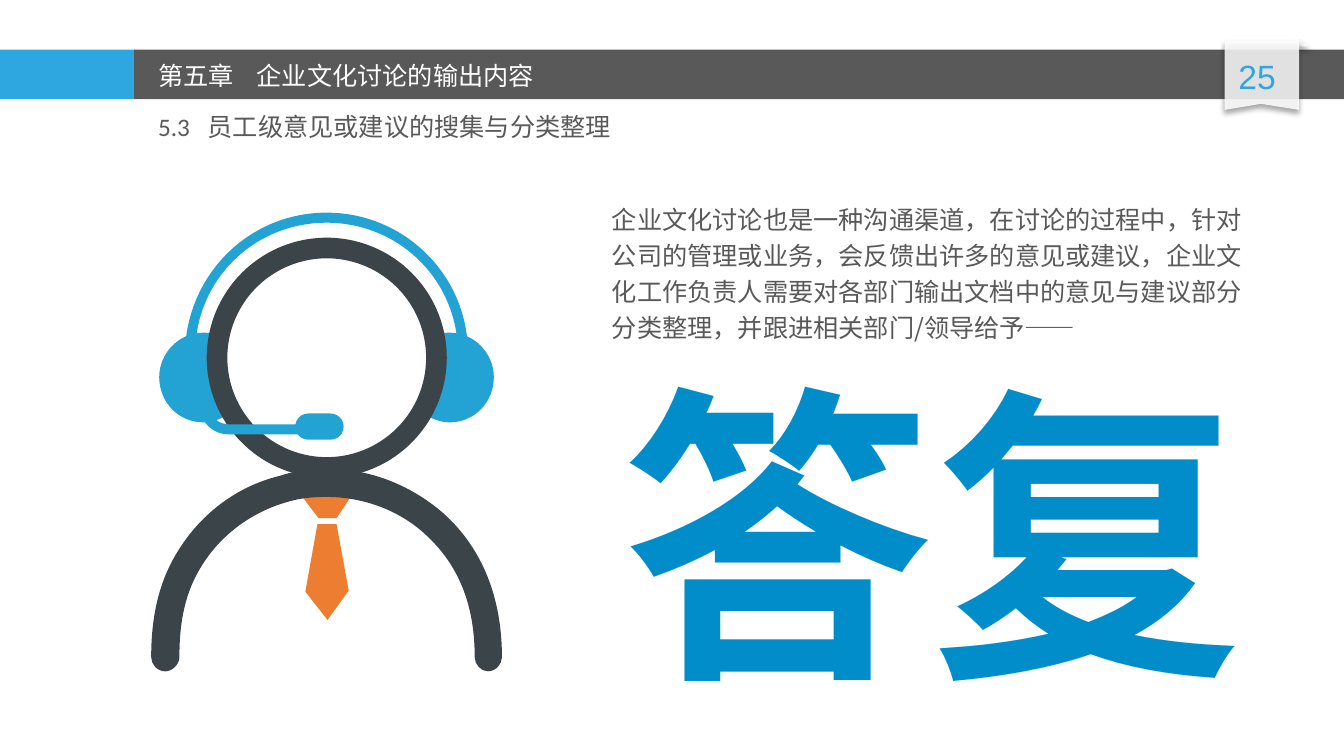
"""Build the slide on collecting and answering staff suggestions."""
from lxml.etree import SubElement
from pptx import Presentation
from pptx.dml.color import RGBColor
from pptx.enum.shapes import MSO_SHAPE
from pptx.enum.text import MSO_ANCHOR, MSO_AUTO_SIZE, PP_ALIGN
from pptx.oxml.ns import qn
from pptx.util import Cm, Pt

COLORS = {
    "bar_blue": "2EA7E0",
    "gray": "595959",
    "white": "FFFFFF",
    "fold": "F8F8F8",
    "headset": "23A3D4",
    "figure": "3B4449",
    "tie": "ED7D31",
    "answer": "008DCA",
}
CJK_FONT = "Noto Sans CJK SC"
GRID = Cm(0.0254)


def paint(shape, color):
    shape.shadow.inherit = False
    shape.fill.solid()
    shape.fill.fore_color.rgb = RGBColor.from_string(COLORS[color])
    shape.line.fill.background()
    return shape


def draw_outline(shapes, color, start, *segments):
    points = [(segment[index] * GRID, segment[index + 1] * GRID)
              for segment in segments for index in range(0, len(segment), 2)]
    builder = shapes.build_freeform(start[0] * GRID, start[1] * GRID)
    builder.add_line_segments(points, close=True)
    shape = builder.convert_to_shape()
    steps = iter(list(shape._element.iter(qn("a:lnTo"))))
    for segment in segments:
        step = next(steps)
        if len(segment) == 6:
            step.tag = qn("a:cubicBezTo")
            for _ in range(2):
                control = next(steps)
                step.append(control[0])
                control.getparent().remove(control)
    return paint(shape, color)


presentation = Presentation()
presentation.slide_width = Cm(33.87)
presentation.slide_height = Cm(19.05)
slide = presentation.slides.add_slide(presentation.slide_layouts[5])
shapes = slide.shapes

for left, width, color in [(0, 3.38, "bar_blue"), (3.38, 30.49, "gray")]:
    bar = shapes.add_shape(MSO_SHAPE.RECTANGLE, Cm(left), Cm(1.25), Cm(width), Cm(1.25))
    paint(bar, color)

ribbon_fold = shapes.add_shape(
    MSO_SHAPE.RIGHT_TRIANGLE, Cm(32.74), Cm(0.97), Cm(0.3), Cm(0.2))
paint(ribbon_fold, "fold")
ribbon = draw_outline(
    shapes, "white", (1215, 109), (1215, 40), (1289, 40), (1289, 109), (1251, 103))
for shape in (ribbon_fold, ribbon):
    properties = shape._element.spPr
    fill_color = properties.find(qn("a:solidFill"))[0]
    SubElement(fill_color, qn("a:alpha"), val="85000")
    shadow = SubElement(
        properties.find(qn("a:effectLst")), qn("a:outerShdw"),
        blurRad=str(Pt(4)), dist=str(Pt(3)), dir="5400000", rotWithShape="0")
    shadow_color = SubElement(shadow, qn("a:srgbClr"), val="000000")
    SubElement(shadow_color, qn("a:alpha"), val="40000")

for mirrored in (False, True):
    ear_cup = [
        (216, 364), (216, 351, 210, 343, 217, 333), (213, 331, 208, 330, 202, 330),
        (177, 330, 158, 351, 158, 374), (158, 399, 177, 419, 202, 419),
        (210, 419, 218, 416, 225, 412), (221, 401, 216, 381, 216, 364)]
    if mirrored:
        ear_cup = [tuple(648 - value if index % 2 == 0 else value
                         for index, value in enumerate(segment))
                   for segment in ear_cup]
    draw_outline(shapes, "headset", *ear_cup)

draw_outline(shapes, "tie", (315, 520), (303, 587), (325, 615), (346, 586), (334, 520))
draw_outline(
    shapes, "tie", (318, 487), (312, 487, 306, 487, 300, 485), (300, 493),
    (316, 514), (334, 514), (348, 493), (348, 481), (339, 485, 329, 487, 318, 487))

head = shapes.add_shape(MSO_SHAPE.DONUT, Cm(5.21), Cm(5.99), Cm(6.05), Cm(6.05))
head.adjustments[0] = 0.086
paint(head, "figure")

draw_outline(
    shapes, "headset", (184, 341),
    (190, 268, 250, 211, 324, 211), (398, 211, 459, 268, 464, 341), (454, 341),
    (449, 273, 393, 221, 324, 221), (255, 221, 199, 273, 194, 341))
draw_outline(
    shapes, "figure", (471, 652),
    (471, 605, 458, 564, 424, 532), (397, 506, 360, 493, 324, 493),
    (311, 493, 298, 494, 285, 498), (250, 508, 220, 530, 201, 560),
    (183, 588, 178, 618, 178, 652), (178, 659, 171, 666, 164, 666),
    (156, 666, 150, 659, 150, 652), (150, 616, 156, 579, 177, 546),
    (200, 509, 236, 482, 278, 472), (293, 467, 308, 465, 324, 465),
    (368, 465, 410, 482, 443, 512), (483, 550, 498, 600, 498, 652),
    (498, 659, 492, 666, 484, 666), (477, 666, 471, 659, 471, 652))

microphone = shapes.add_shape(
    MSO_SHAPE.ROUNDED_RECTANGLE, Cm(7.44), Cm(10.42), Cm(1.22), Cm(0.66))
microphone.adjustments[0] = 0.5
paint(microphone, "headset")
draw_outline(
    shapes, "headset", (227, 431), (212, 431, 200, 420, 198, 406), (209, 405),
    (209, 414, 217, 421, 227, 421), (299, 421), (299, 431))

texts = [
    ("25", 30.74, 1.28, 1.88, 1.27, 24, "Arial", "bar_blue", None),
    ("第五章\t企业文化讨论的输出内容", 3.74, 1.4, 12.8, 1.02, 18, CJK_FONT, "white", 2.48),
    ("5.3\t员工级意见或建议的搜集与分类整理",
     3.73, 2.69, 13.49, 1.02, 18, "Calibri", "gray", 1.25),
    ("企业文化讨论也是一种沟通渠道，在讨论的过程中，针对公司的管理或业务，"
     "会反馈出许多的意见或建议，企业文化工作负责人需要对各部门输出文档中的"
     "意见与建议部分分类整理，并跟进相关部门/领导给予——",
     15.17, 4.86, 16.87, 3.91, 18, CJK_FONT, "gray", None),
    ("答复", 15.43, 8.51, 16.18, 9.65, 222, "Calibri", "answer", None),
]
for text, left, top, width, height, size, font_name, color, tab in texts:
    if text.startswith("5.3"):
        box = shapes.title
        box.left, box.top, box.width, box.height = Cm(left), Cm(top), Cm(width), Cm(height)
    else:
        box = shapes.add_textbox(Cm(left), Cm(top), Cm(width), Cm(height))
    frame = box.text_frame
    frame.text = text
    frame.word_wrap = text != "答复"
    frame.auto_size = MSO_AUTO_SIZE.SHAPE_TO_FIT_TEXT
    frame.vertical_anchor = MSO_ANCHOR.TOP
    paragraph = frame.paragraphs[0]
    paragraph.alignment = PP_ALIGN.CENTER if text == "25" else PP_ALIGN.LEFT
    if len(text) > 40:
        paragraph.line_spacing = 1.2
    if tab:
        tab_list = SubElement(paragraph._p.get_or_add_pPr(), qn("a:tabLst"))
        SubElement(tab_list, qn("a:tab"), pos=str(Cm(tab)), algn="l")
    font = paragraph.font
    font.name = font_name
    font.size = Pt(size)
    font.bold = text == "答复"
    font.color.rgb = RGBColor.from_string(COLORS[color])

presentation.save("out.pptx")
